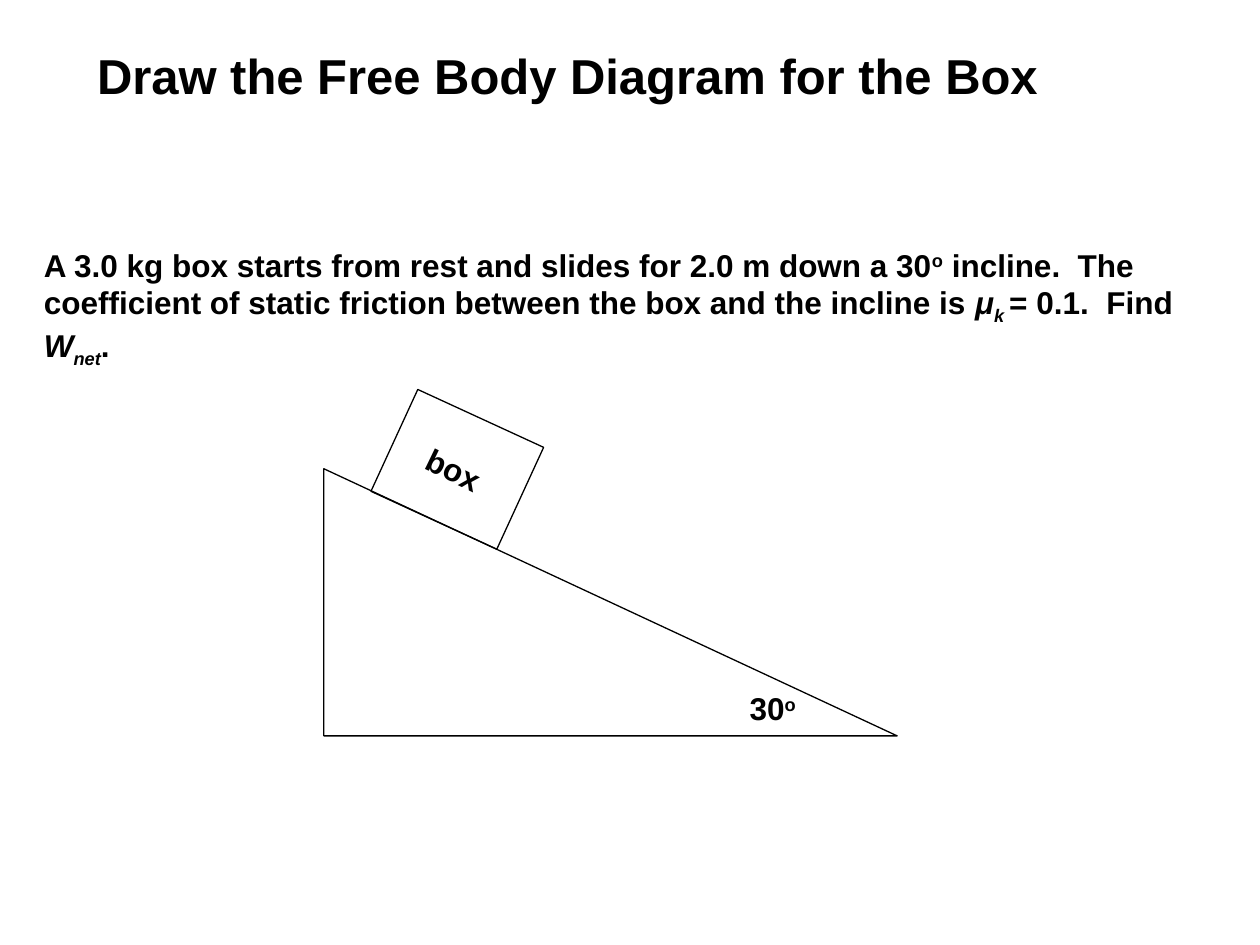
from pptx import Presentation, util as u
from pptx.dml.color import RGBColor
from pptx.enum import shapes, text

# Content: runs are (text, italic, baseline shift in percent)
INK = "000000"
FONT = "Arial"
W, H = 10, 7.5
TITLE = [("Draw the Free Body Diagram for the Box", False, 0)]
PROBLEM = [
    ("A 3.0 kg box starts from rest and slides for 2.0 m down a 30", False, 0),
    ("o", False, 30),
    (" incline.  The coefficient of static friction between the box "
     "and the incline is ", False, 0),
    ("μ", True, 0),
    ("k ", True, -25),
    ("= 0.1.  Find ", False, 0),
    ("W", True, 0),
    ("net", True, -25),
    (".", False, 0),
]
# Outlines: preset, (left, top, width, height), rotation
OUTLINES = [
    (shapes.MSO_SHAPE.RIGHT_TRIANGLE, (2.57, 3.72, 4.55, 2.12), 0),
    (shapes.MSO_SHAPE.RECTANGLE, (3.08, 3.28, 1.1, 0.89), 24.7),
]
# Labels: runs, (left, top, width, height), rotation
LABELS = [
    ([("30", False, 0), ("o", False, 30)], (5.85, 5.42, 0.61, 0.4), 0),
    ([("box", False, 0)], (3.28, 3.53, 0.66, 0.4), 25.7),
]


def color(value):
    return RGBColor.from_string(value)


def inches(box):
    return [u.Inches(v) for v in box]


def write(sp, runs, size, wrap=True):
    tf = sp.text_frame
    tf.word_wrap = wrap
    tf.auto_size = text.MSO_AUTO_SIZE.NONE
    tf.vertical_anchor = text.MSO_ANCHOR.TOP
    p = tf.paragraphs[0]
    p.alignment = text.PP_ALIGN.LEFT
    for words, italic, shift in runs:
        r = p.add_run()
        r.text = words
        r.font.name, r.font.size = FONT, u.Pt(size)
        r.font.bold, r.font.italic = True, italic
        r.font.color.rgb = color(INK)
        if shift:
            r._r.get_or_add_rPr().set("baseline", str(shift * 1000))


prs = Presentation()
prs.slide_width, prs.slide_height = u.Inches(W), u.Inches(H)
s = prs.slides.add_slide(prs.slide_layouts[5])

# Title and problem statement
title = s.shapes.title
title.left, title.top, title.width, title.height = inches((0.67, 0.31, 9.4, 0.57))
write(title, TITLE, 28)
write(s.shapes.add_textbox(*inches((0.25, 1.9, 9.4, 0.71))), PROBLEM, 18)

# Incline with the box on it
diagram = s.shapes.add_group_shape()
for preset, box, angle in OUTLINES:
    sp = diagram.shapes.add_shape(preset, *inches(box))
    sp.rotation = angle
    sp.shadow.inherit = False
    sp.fill.background()
    sp.line.color.rgb = color(INK)
    sp.line.width = u.Pt(0.75)
for runs, box, angle in LABELS:
    sp = diagram.shapes.add_textbox(*inches(box))
    sp.rotation = angle
    write(sp, runs, 18, wrap=False)

prs.save("out.pptx")
